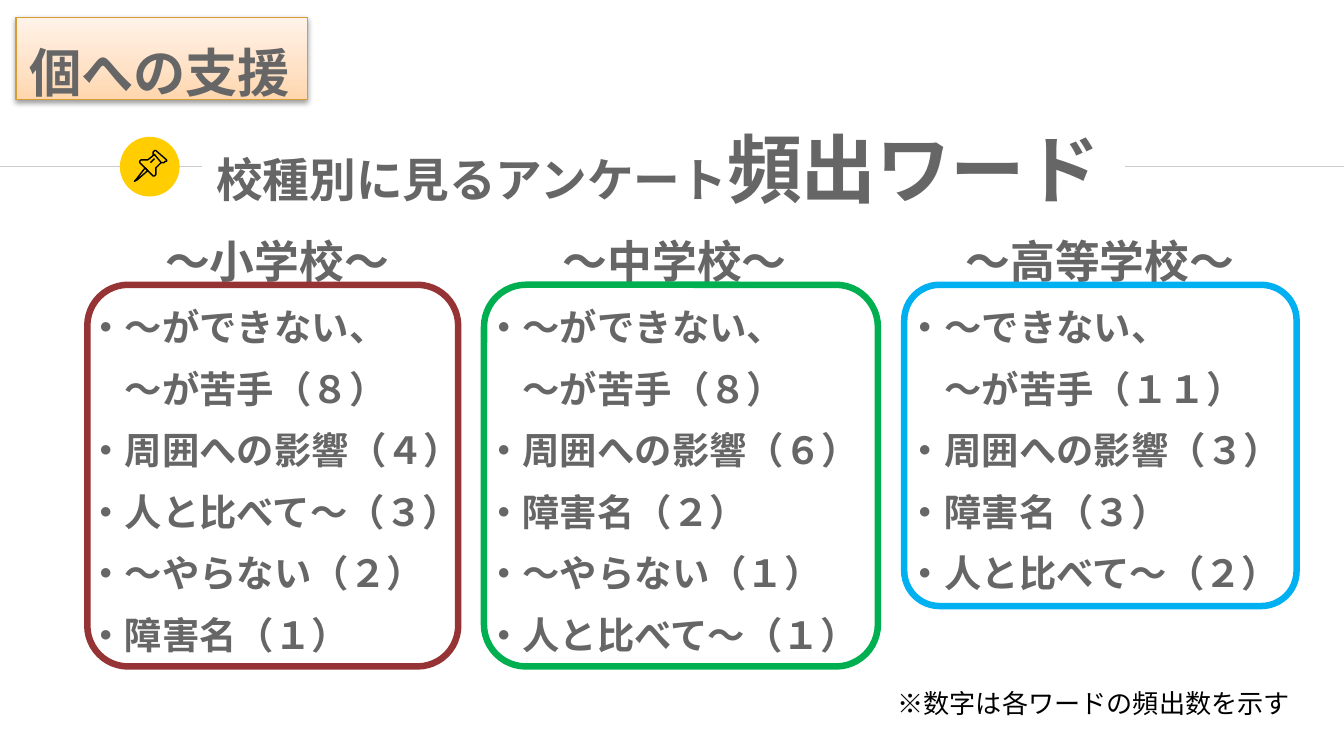
import copy

import lxml.etree
import pptx
import pptx.dml.color
import pptx.enum.shapes
import pptx.enum.text
import pptx.oxml.ns
import pptx.util

Pt = pptx.util.Pt
qn = pptx.oxml.ns.qn
SHAPE = pptx.enum.shapes.MSO_SHAPE
ANCHOR = pptx.enum.text.MSO_ANCHOR
ALIGN = pptx.enum.text.PP_ALIGN
SubElement = lxml.etree.SubElement

FONT = "Noto Sans CJK JP"
MARGINS = {"margin_left": Pt(7.2), "margin_right": Pt(7.2),
           "margin_top": Pt(7.2), "margin_bottom": Pt(7.2)}


def color(hex_string):
    return pptx.dml.color.RGBColor.from_string(hex_string)


def write(paragraph, text, size, hex_string="666666", bold=True):
    """Add text to a paragraph, with a line break at each newline."""
    for number, line in enumerate(text.split("\n")):
        if number:
            paragraph.add_line_break()
        run = paragraph.add_run()
        run.text = line
        for key, value in {"size": Pt(size), "bold": bold, "name": FONT}.items():
            setattr(run.font, key, value)
        run.font.color.rgb = color(hex_string)
        SubElement(run.font._element, qn("a:ea"), typeface=FONT)


presentation = pptx.Presentation()
presentation.slide_width, presentation.slide_height = Pt(720), Pt(405)
slide = presentation.slides.add_slide(presentation.slide_layouts[5])
shapes = slide.shapes

# Rule on both sides of the heading
for start, end in [(0, 108), (414.7, 720)]:
    rule = shapes.add_connector(pptx.enum.shapes.MSO_CONNECTOR.STRAIGHT,
                                Pt(start), Pt(89.3), Pt(end), Pt(89.3))
    rule.line.color.rgb = color("CCCCCC")
    rule.line.width = Pt(0.75)
    SubElement(rule._element.spPr, qn("a:effectLst"))

# Yellow disc behind the drawing pin
disc = shapes.add_shape(SHAPE.OVAL, Pt(64.2), Pt(73.3), Pt(32), Pt(32))
disc.shadow.inherit = False
disc.fill.solid()
disc.fill.fore_color.rgb = color("FFCD00")
disc.line.fill.background()

# Heading, in front of the rule
heading = shapes.title
shapes._spTree.append(heading._element)
heading_place = {"left": Pt(108.7), "top": Pt(72.7), "width": Pt(493.9), "height": Pt(34.6)}
for key, value in heading_place.items():
    setattr(heading, key, value)
heading.fill.solid()
heading.fill.fore_color.rgb = color("FFFFFF")
heading_format = {**MARGINS, "vertical_anchor": ANCHOR.MIDDLE, "word_wrap": True,
                  "auto_size": pptx.enum.text.MSO_AUTO_SIZE.NONE}
for key, value in heading_format.items():
    setattr(heading.text_frame, key, value)
heading_line = heading.text_frame.paragraphs[0]
heading_line.alignment = ALIGN.LEFT
write(heading_line, "校種別に見るアンケート", 25)
write(heading_line, "頻出ワード", 40)

# Pin outlines, in units of 0.72 pt
needle = [(108, 125), (101, 134), (100, 135), (102, 134), (110, 127)]
cap = [(115, 115), (120, 121), (122, 121), (123, 120), (124, 120), (124, 119),
       (116, 112), (115, 112), (114, 113), (114, 115)]
body = [(115, 115), (110, 119), (108, 119), (105, 119), (104, 120), (104, 121),
        (114, 131), (115, 131), (116, 130), (116, 128), (116, 125), (120, 121)]
gleam = [(112, 121), (115, 118)]
for outline, closed in [(needle, True), (cap, True), (body, False), (gleam, False)]:
    builder = shapes.build_freeform(*outline[0], scale=Pt(0.72))
    builder.add_line_segments(outline[1:], close=closed)
    pin_part = builder.convert_to_shape()
    pin_part.shadow.inherit = False
    pin_part.fill.background()
    pin_part.line.color.rgb = color("000000")
    pin_part.line.width = Pt(0.75)

# Word lists: school, text left/width/height, frame left/width/height, colour, words
schools = [
    ("～小学校～", (39.7, 217.4, 238.3), (46.8, 198.7, 204.5), "963334",
     ["・～ができない、\n～が苦手（８）", "・周囲への影響（４）", "・人と比べて～（３）",
      "・～やらない（２）", "・障害名（１）"]),
    ("～中学校～", (252.8, 217.4, 254.9), (259.3, 211, 204.5), "00B050",
     ["・～ができない、", "～が苦手（８）", "・周囲への影響（６）", "・障害名（２）",
      "・～やらない（１）", "・人と比べて～（１）"]),
    ("～高等学校～", (478.8, 221, 254.9), (484.4, 210.2, 172.1), "00B0F0",
     ["・～できない、", "～が苦手（１１）", "・周囲への影響（３）", "・障害名（３）",
      "・人と比べて～（２）"]),
]
for school, (left, width, height), frame_place, frame_color, words in schools:
    word_list = shapes.add_textbox(Pt(left), Pt(118.8), Pt(width), Pt(height)).text_frame
    for key, value in {**MARGINS, "word_wrap": True}.items():
        setattr(word_list, key, value)
    school_line = word_list.paragraphs[0]
    school_line.alignment = ALIGN.CENTER
    school_line.line_spacing = Pt(28)
    write(school_line, school, 24)
    for word in words:
        word_line = word_list.add_paragraph()
        word_line.line_spacing = Pt(33)
        # Words hang to the right of the dot
        indent = word_line._p.get_or_add_pPr()
        indent.set("marL", str(Pt(20)))
        indent.set("indent", str(-Pt(20) if word.startswith("・") else 0))
        write(word_line, word, 20)

    left, width, height = frame_place
    frame = shapes.add_shape(SHAPE.ROUNDED_RECTANGLE,
                             Pt(left), Pt(152.6), Pt(width), Pt(height))
    frame.adjustments[0] = 0.11
    frame.shadow.inherit = False
    frame.fill.background()
    frame.line.color.rgb = color(frame_color)
    frame.line.width = Pt(3.5)

# Remark on the numbers
remark = shapes.add_textbox(Pt(473.6), Pt(364.5), Pt(238.3), Pt(24.5)).text_frame
remark.word_wrap = True
write(remark.paragraphs[0], "※数字は各ワードの頻出数を示す", 14, "000000", False)

# Topic banner with gradient and soft shadow
banner = shapes.add_shape(SHAPE.RECTANGLE, Pt(8.5), Pt(9.3), Pt(156.2), Pt(43.9))
banner.fill.gradient()
banner.fill.gradient_angle = 90
first_stop = banner._element.spPr.find(".//" + qn("a:gs"))
first_stop.addnext(copy.deepcopy(first_stop))
banner_stops = [(0, "FFD6AD"), (0.35, "FFE1C5"), (1, "FFF3E9")]
for stop, (position, stop_color) in zip(banner.fill.gradient_stops, banner_stops):
    stop.position = position
    stop.color.rgb = color(stop_color)
banner.line.color.rgb = color("D79D34")
banner.line.width = Pt(0.75)
effects = SubElement(banner._element.spPr, qn("a:effectLst"))
shadow = SubElement(effects, qn("a:outerShdw"), blurRad=str(Pt(3.1)),
                    dist=str(Pt(1.6)), dir="5400000", rotWithShape="0")
shadow_color = SubElement(shadow, qn("a:srgbClr"), val="000000")
SubElement(shadow_color, qn("a:alpha"), val="38000")
banner_format = {**MARGINS, "margin_top": Pt(17.3), "margin_bottom": Pt(3.6),
                 "vertical_anchor": ANCHOR.MIDDLE, "word_wrap": True}
for key, value in banner_format.items():
    setattr(banner.text_frame, key, value)
banner_line = banner.text_frame.paragraphs[0]
banner_line.alignment = ALIGN.LEFT
write(banner_line, "個への支援", 28)

presentation.save("out.pptx")
